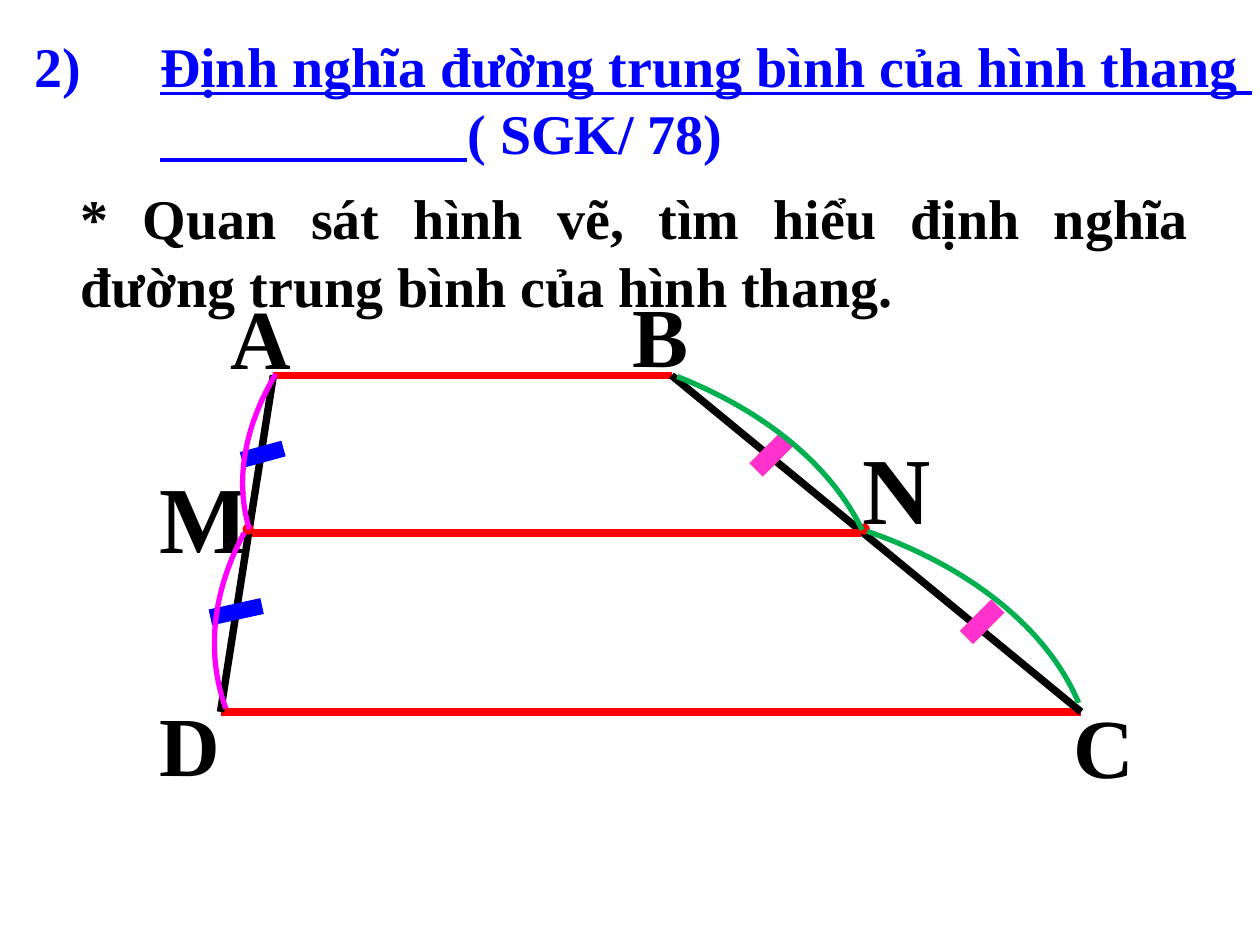
from pptx import Presentation
from pptx.dml.color import RGBColor
from pptx.enum.shapes import MSO_CONNECTOR, MSO_SHAPE
from pptx.enum.text import MSO_ANCHOR, MSO_AUTO_SIZE, PP_ALIGN
from pptx.oxml.ns import qn
from pptx.util import Inches, Pt
from lxml.etree import SubElement

FONT = "Times New Roman"
BLUE = RGBColor(0x00, 0x00, 0xFF)
BLACK = RGBColor(0x00, 0x00, 0x00)
RED = RGBColor(0xFF, 0x00, 0x00)
PINK = RGBColor(0xFF, 0x33, 0xCC)
MAGENTA = RGBColor(0xFF, 0x00, 0xFF)
GREEN = RGBColor(0x00, 0xB0, 0x50)


def place(shape, box):
    """Move a shape to a box of left, top, width and height in inches."""
    shape.left, shape.top, shape.width, shape.height = map(Inches, box)


def write(para, text, size=32, color=BLACK, line=False, align=PP_ALIGN.LEFT,
          after=0, margin=0, indent=0, start=None):
    """Fill a paragraph with formatted text, numbered when start is given."""
    para.alignment = align
    para.space_before, para.space_after = Pt(0), Pt(after)
    run = para.add_run()
    run.text = text
    font = run.font
    font.name, font.size, font.bold = FONT, Pt(size), True
    font.underline = line
    font.color.rgb = color
    props = para._p.get_or_add_pPr()
    props.set("marL", str(Inches(margin)))
    props.set("indent", str(Inches(indent)))
    if start is None:
        SubElement(props, qn("a:buNone"))
    else:
        SubElement(props, qn("a:buAutoNum"), type="arabicParenR",
                   startAt=str(start))


def setup(shape, box):
    """Place a text shape and return its top-anchored frame."""
    place(shape, box)
    frame = shape.text_frame
    frame.word_wrap = True
    frame.auto_size = MSO_AUTO_SIZE.NONE
    frame.vertical_anchor = MSO_ANCHOR.TOP
    return frame


def draw(slide, start, end, color, width=4.25):
    """Draw a straight line between two points in inches."""
    line = slide.shapes.add_connector(
        MSO_CONNECTOR.STRAIGHT, *map(Inches, (*start, *end)))
    line.line.color.rgb, line.line.width = color, Pt(width)
    SubElement(line._element.spPr, qn("a:effectLst"))


def heading(slide, box):
    """Write the numbered title with its underlined blanks."""
    left, top = box[:2]
    frame = setup(slide.shapes.title, box)
    write(frame.paragraphs[0], "Định nghĩa đường trung bình của hình thang",
          color=BLUE, line=True, margin=1, indent=-1, start=2)
    write(frame.add_paragraph(), "( SGK/ 78)", color=BLUE, margin=3.44)
    for x, end, y in ((9.64, 9.77, 0.54), (1.1, 3.54, 1.07)):
        draw(slide, (left + x, top + y), (left + end, top + y), BLUE, 2)


def task(slide, box):
    """Write the instruction in the body placeholder."""
    frame = setup(slide.placeholders[1], box)
    write(frame.paragraphs[0],
          "* Quan sát hình vẽ, tìm hiểu định nghĩa đường trung bình "
          "của hình thang.", align=PP_ALIGN.JUSTIFY, after=6)


def figure(slide, box):
    """Draw the trapezoid with its midline, marks and labels."""
    left, top, wide, high = box
    mid = 1.25

    def at(x, y):
        """Shift a point of the figure to the slide."""
        return left + x, top + y

    a, b, c, d = at(0.42, 0), at(3.58, 0), at(wide, high), at(0, high)
    for start, end, color in ((a, b, RED), (d, c, RED),
                              (a, d, BLACK), (b, c, BLACK)):
        draw(slide, start, end, color)

    for text, x, y, width, size in (
            ("A", -0.02, -0.76, 0.67, 48), ("B", 3.17, -0.78, 0.67, 48),
            ("C", 6.67, 2.48, 0.67, 48), ("D", -0.58, 2.47, 0.67, 48),
            ("M", -0.58, 0.61, 0.92, 54), ("N", 5, 0.38, 0.75, 54)):
        spot = (*at(x, y), width, 0.91 if size == 48 else 1.01)
        label = slide.shapes.add_textbox(*map(Inches, spot))
        write(setup(label, spot).paragraphs[0], text, size=size)

    for x in (0.19, 5.08):
        dot = slide.shapes.add_shape(
            MSO_SHAPE.OVAL, *map(Inches, (*at(x, mid - 0.06), 0.06, 0.06)))
        dot.shadow.inherit = False
        dot.fill.solid()
        dot.fill.fore_color.rgb = RED
        dot.line.color.rgb, dot.line.width = RED, Pt(2)

    for start, end, color, width in (
            ((0.5, 0.58), (0.17, 0.67), BLUE, 9.25),
            ((0.33, 1.83), (-0.08, 1.92), BLUE, 9.25),
            ((5.92, 2.08), (6.17, 1.83), PINK, 10.75),
            ((4.25, 0.75), (4.5, 0.5), PINK, 10.75),
            ((0.25, mid), (5.08, mid), RED, 4.25)):
        draw(slide, at(*start), at(*end), color, width)

    for x, y, width, height, turn, start, end, color in (
            (1.15, -2.66, 3.77, 5.91, 250.9, 162.51, 177.49, MAGENTA),
            (-0.88, -0.28, 6.13, 4.08, 3.7, 183.43, 207.55, GREEN),
            (0.54, -0.84, 3.91, 5.21, 250.9, 161.64, 181.06, MAGENTA),
            (0.71, 1, 6.22, 4.08, 3.7, 181.38, 208.74, GREEN)):
        arc = slide.shapes.add_shape(
            MSO_SHAPE.ARC, *map(Inches, (*at(x, y), width, height)))
        arc.shadow.inherit = False
        arc.rotation = turn
        arc.adjustments[0], arc.adjustments[1] = start, end
        arc.fill.background()
        arc.line.color.rgb, arc.line.width = color, Pt(3)


def main():
    """Build the slide and save it."""
    deck = Presentation()
    deck.slide_width, deck.slide_height = Inches(10), Inches(7.5)
    slide = deck.slides.add_slide(deck.slide_layouts[1])
    heading(slide, (0.17, 0.2, 9.92, 1.18))
    task(slide, (0.54, 1.41, 9, 1.18))
    figure(slide, (1.75, 2.98, 6.83, 2.67))
    deck.save("out.pptx")


if __name__ == "__main__":
    main()
